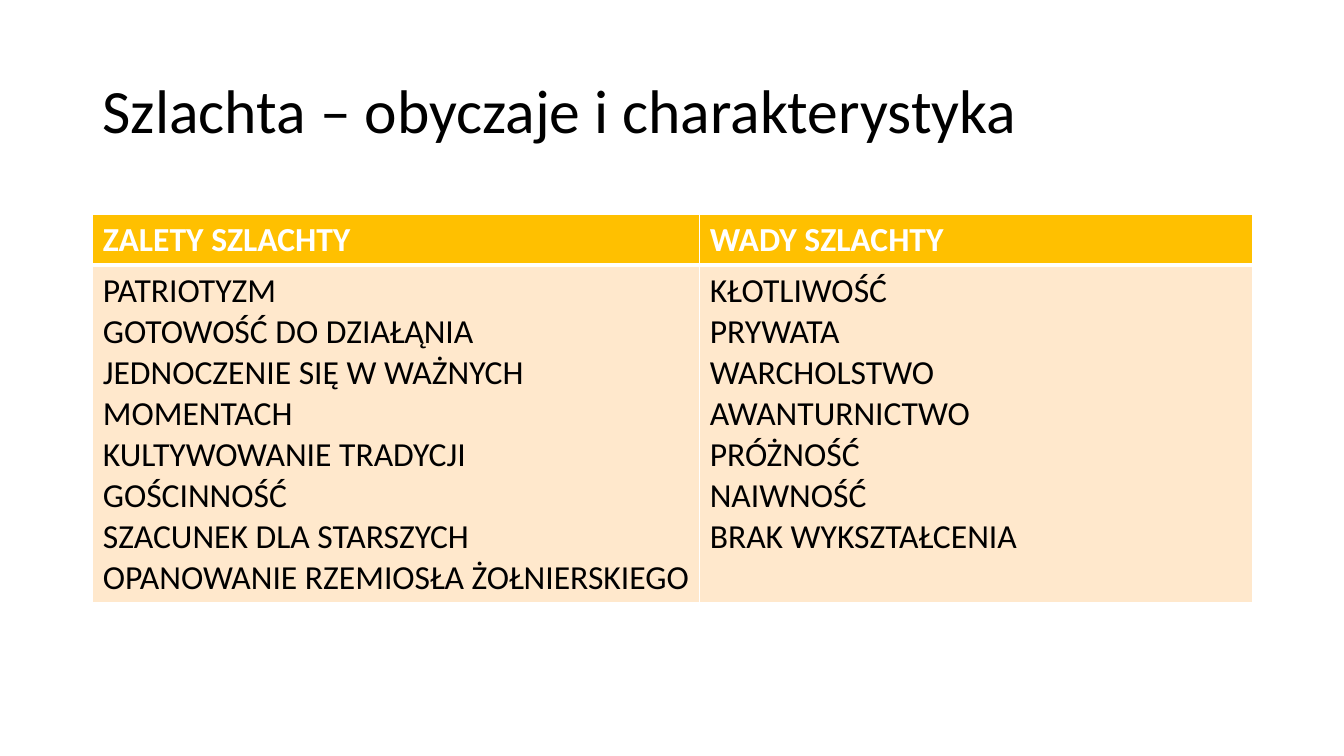
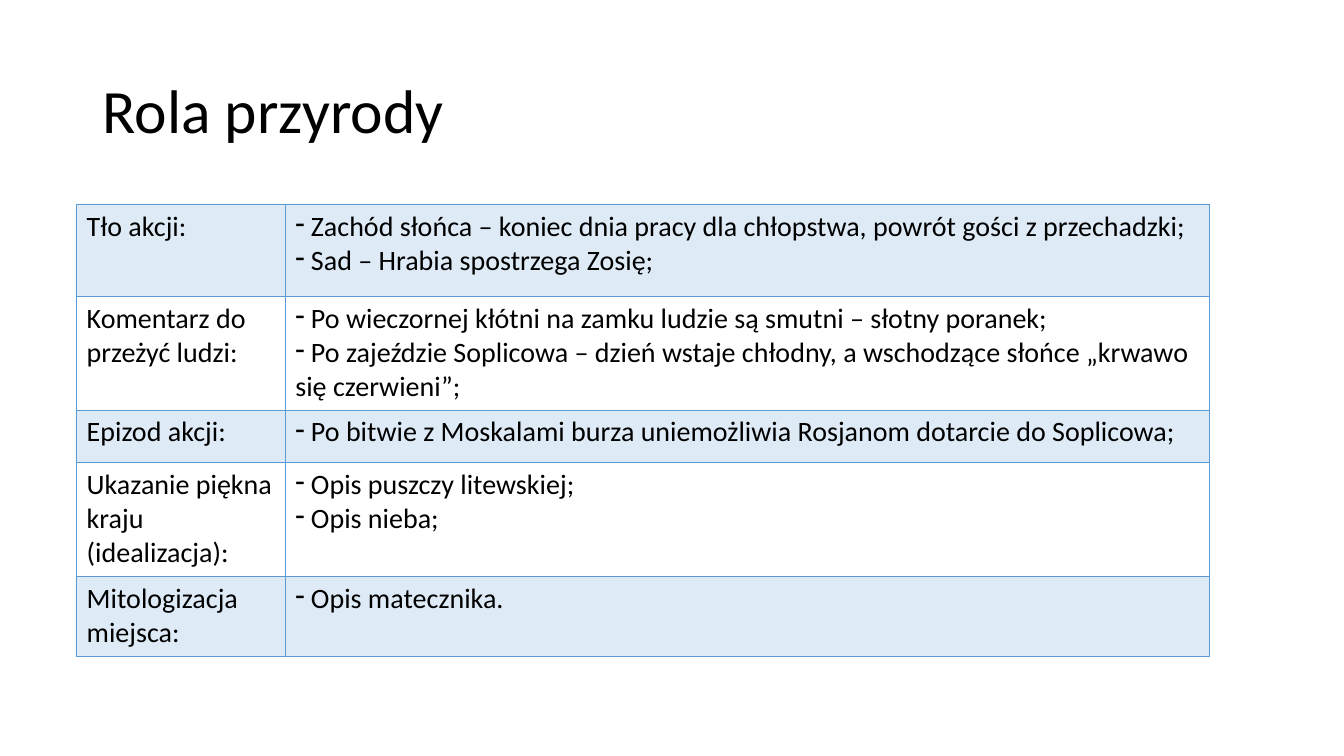
from lxml import etree
from pptx import Presentation
from pptx.dml.color import RGBColor
from pptx.enum import text as tx
from pptx.oxml import ns
from pptx.util import Inches, Pt

FONT = "Calibri"
BLACK, WHITE = "000000", "FFFFFF"
GOLD, CREAM = "FFC000", "FFE8CC"
BLUE, PALE = "5B9BD5", "DEEBF7"


def style(par, size, color=BLACK, bold=False):
    for run in par.runs:
        run.font.name = FONT
        run.font.size = Pt(size)
        run.font.bold = bold
        run.font.color.rgb = RGBColor.from_string(color)


def edge(cell, color, widths):
    """Draw the cell borders; widths in points: left, right, top, bottom."""
    props = cell._tc.get_or_add_tcPr()
    for side, width in zip("LRTB", widths):
        line = etree.SubElement(props, ns.qn("a:ln" + side), w=str(Pt(width)))
        fill = etree.SubElement(line, ns.qn("a:solidFill"))
        etree.SubElement(fill, ns.qn("a:srgbClr"), val=color)


# Content: each cell is a list of paragraphs
nobles = [
    [["ZALETY SZLACHTY"], ["WADY SZLACHTY"]],
    [["PATRIOTYZM", "GOTOWOŚĆ DO DZIAŁĄNIA",
      "JEDNOCZENIE SIĘ W WAŻNYCH MOMENTACH", "KULTYWOWANIE TRADYCJI",
      "GOŚCINNOŚĆ", "SZACUNEK DLA STARSZYCH",
      "OPANOWANIE RZEMIOSŁA ŻOŁNIERSKIEGO"],
     ["KŁOTLIWOŚĆ", "PRYWATA", "WARCHOLSTWO", "AWANTURNICTWO",
      "PRÓŻNOŚĆ", "NAIWNOŚĆ", "BRAK WYKSZTAŁCENIA"]],
]
nature = [
    [["Tło akcji:"],
     ["Zachód słońca – koniec dnia pracy dla chłopstwa, powrót gości z przechadzki;",
      "Sad – Hrabia spostrzega Zosię;"]],
    [["Komentarz do przeżyć ludzi:"],
     ["Po wieczornej kłótni na zamku ludzie są smutni – słotny poranek;",
      "Po zajeździe Soplicowa – dzień wstaje chłodny, a wschodzące słońce "
      "„krwawo się czerwieni”;"]],
    [["Epizod akcji:"],
     ["Po bitwie z Moskalami burza uniemożliwia Rosjanom dotarcie do Soplicowa;"]],
    [["Ukazanie piękna kraju (idealizacja):"],
     ["Opis puszczy litewskiej;", "Opis nieba;"]],
    [["Mitologizacja miejsca:"], ["Opis matecznika."]],
]

# Title, cells, left, top, column widths, row heights, text size, border, fills
pages = [
    ("Szlachta – obyczaje i charakterystyka", nobles, 0.92, 2.13,
     [6.02, 5.48], [0.5, 3.35], 24, WHITE, [GOLD, CREAM]),
    ("Rola przyrody", nature, 0.76, 2.03,
     [2.07, 9.17], [0.91, 1.13, 0.52, 1.13, 0.79], 20, BLUE, [PALE, None]),
]

prs = Presentation()
prs.slide_width, prs.slide_height = Inches(13.33), Inches(7.5)

for title, rows, left, top, cols, highs, size, rim, fills in pages:
    slide = prs.slides.add_slide(prs.slide_layouts[6])

    # Title
    box = slide.shapes.add_textbox(Inches(0.92), Inches(0.4), Inches(11.5), Inches(1.45))
    frame = box.text_frame
    frame.word_wrap = True
    frame.vertical_anchor = tx.MSO_ANCHOR.MIDDLE
    frame.text = title
    frame.paragraphs[0].line_spacing = 0.9
    style(frame.paragraphs[0], 44)

    # Table grid
    table = slide.shapes.add_table(
        len(rows), len(cols), Inches(left), Inches(top),
        Inches(sum(cols)), Inches(sum(highs))).table
    table.first_row = rows is nobles
    table.horz_banding = False
    for col, width in zip(table.columns, cols):
        col.width = Inches(width)
    for row, high in zip(table.rows, highs):
        row.height = Inches(high)

    # Cells
    for r, row in enumerate(rows):
        for c, lines in enumerate(row):
            cell = table.cell(r, c)
            head = rows is nobles and r == 0
            dashed = rows is nature and c == 1
            widths = [1, 1, 1, 1]
            if rows is nobles:
                widths[3 if head else 2] = 3
            edge(cell, rim, widths)
            fill = fills[r % 2]
            if fill:
                cell.fill.solid()
                cell.fill.fore_color.rgb = RGBColor.from_string(fill)
            else:
                cell.fill.background()
            cell.text_frame.text = "\n".join(" " + s if dashed else s for s in lines)
            for par in cell.text_frame.paragraphs:
                style(par, size, WHITE if head else BLACK, head)
                if dashed:
                    props = par._p.get_or_add_pPr()
                    props.set("marL", "0")
                    props.set("indent", "0")
                    etree.SubElement(props, ns.qn("a:buChar"), char="-")

prs.save("out.pptx")
